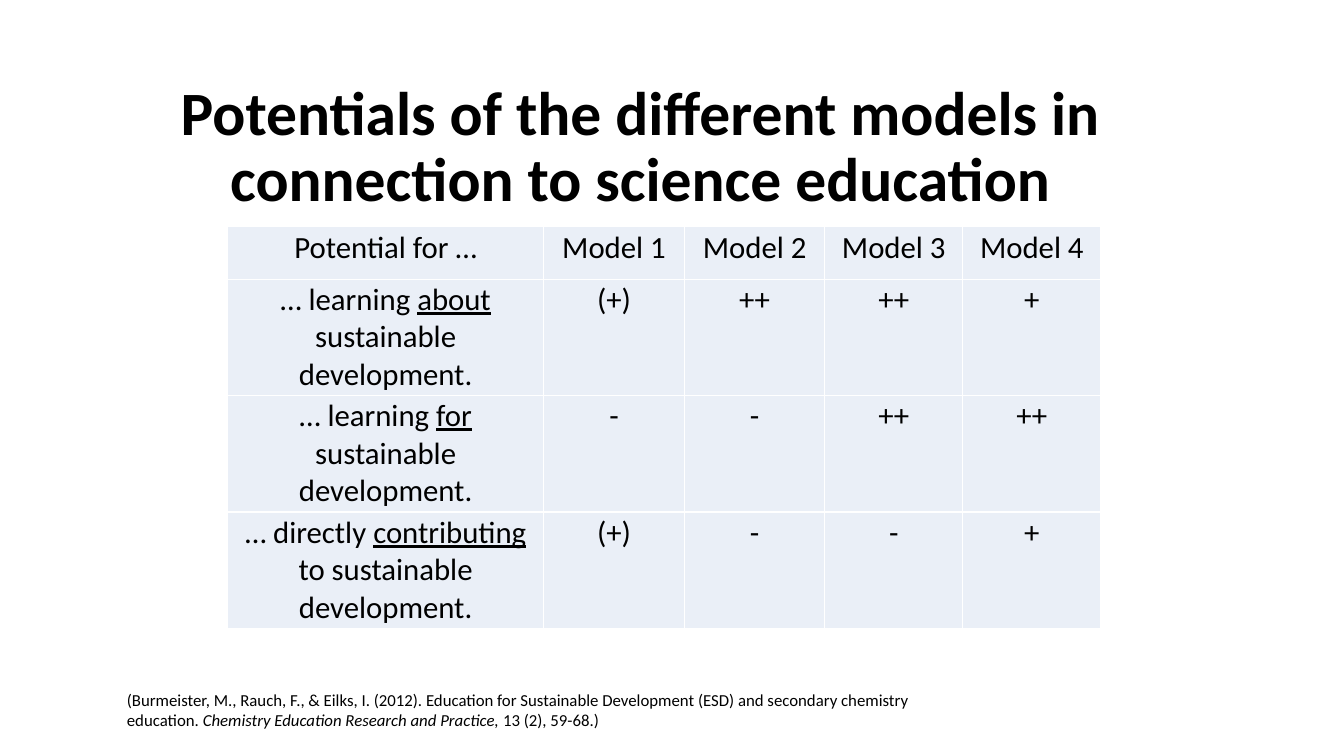
from dataclasses import dataclass

from lxml.etree import SubElement
from pptx import Presentation
from pptx.dml.color import RGBColor
from pptx.enum.text import MSO_ANCHOR, MSO_AUTO_SIZE, PP_ALIGN
from pptx.oxml.ns import qn
from pptx.util import Inches, Pt


@dataclass(frozen=True)
class Theme:
    font: str = "Calibri"
    ink: str = "000000"
    cell: str = "EAEFF7"
    rule: str = "FFFFFF"
    title: int = 44
    table: int = 22
    cite: int = 12


class Deck:
    def __init__(self, theme):
        self.theme = theme
        self.prs = Presentation()
        self.prs.slide_width = Inches(13.33)
        self.prs.slide_height = Inches(7.5)
        self.slide = self.prs.slides.add_slide(self.prs.slide_layouts[5])

    def add_runs(self, para, runs, size, align=PP_ALIGN.LEFT, bold=False):
        """Add runs given as (text, mark), where mark is "", "u" or "i"."""
        para.alignment = align
        for text, mark in runs:
            run = para.add_run()
            run.text = text
            font = run.font
            font.name, font.size, font.bold = self.theme.font, Pt(size), bold
            font.underline, font.italic = mark == "u", mark == "i"
            font.color.rgb = RGBColor.from_string(self.theme.ink)

    def title(self, text, box):
        shape = self.slide.shapes.title
        shape.left, shape.top, shape.width, shape.height = map(Inches, box)
        frame = shape.text_frame
        frame.word_wrap = True
        frame.auto_size = MSO_AUTO_SIZE.NONE
        frame.vertical_anchor = MSO_ANCHOR.MIDDLE
        para = frame.paragraphs[0]
        para.line_spacing = 0.9
        self.add_runs(para, [(text, "")], self.theme.title,
                      PP_ALIGN.CENTER, True)

    def text(self, runs, box):
        frame = self.slide.shapes.add_textbox(*map(Inches, box)).text_frame
        frame.word_wrap = True
        frame.auto_size = MSO_AUTO_SIZE.SHAPE_TO_FIT_TEXT
        self.add_runs(frame.paragraphs[0], runs, self.theme.cite)

    def edge(self, cell):
        """Draw the four borders of a cell."""
        props = cell._tc.get_or_add_tcPr()
        for spot, side in enumerate(("lnL", "lnR", "lnT", "lnB")):
            line = SubElement(props, qn(f"a:{side}"), w=str(Pt(1)))
            props.insert(spot, line)
            fill = SubElement(line, qn("a:solidFill"))
            SubElement(fill, qn("a:srgbClr"), val=self.theme.rule)

    def table(self, rows, box, widths, heights):
        shape = self.slide.shapes.add_table(
            len(rows), len(widths), *map(Inches, box))
        grid = shape.table
        grid.first_row = grid.horz_banding = False
        for col, width in zip(grid.columns, widths):
            col.width = Inches(width)
        for row, height, cells in zip(grid.rows, heights, rows):
            row.height = Inches(height)
            for cell, runs in zip(row.cells, cells):
                cell.margin_left = cell.margin_right = Inches(0.02)
                cell.margin_top = cell.margin_bottom = Inches(0.02)
                cell.fill.solid()
                cell.fill.fore_color.rgb = RGBColor.from_string(self.theme.cell)
                self.edge(cell)
                self.add_runs(cell.text_frame.paragraphs[0], runs,
                              self.theme.table, PP_ALIGN.CENTER)
        shape.height = Inches(box[3])


def main():
    deck = Deck(Theme())
    deck.title("Potentials of the different models in connection to "
               "science education", (0.24, 0.85, 12.23, 1.25))

    goals = [
        ("… learning ", "about", " sustainable development.",
         ("(+)", "++", "++", "+")),
        ("… learning ", "for", " sustainable development.",
         ("-", "-", "++", "++")),
        ("… directly ", "contributing", " to sustainable development.",
         ("(+)", "-", "-", "+")),
    ]
    rows = [[[("Potential for …", "")]]
            + [[(f"Model {n}", "")] for n in range(1, 5)]]
    for start, key, end, marks in goals:
        rows.append([[(start, ""), (key, "u"), (end, "")]]
                    + [[(mark, "")] for mark in marks])
    deck.table(rows, (2.26, 2.25, 8.66, 3.94),
               (3.13, 1.4, 1.39, 1.37, 1.37), [0.52] + [0.96] * len(goals))

    deck.text([
        ("(Burmeister, M., Rauch, F., & Eilks, I. (2012). Education for "
         "Sustainable Development (ESD) and secondary chemistry education. ", ""),
        ("Chemistry Education Research and Practice, ", "i"),
        ("13 (2), 59-68.)", ""),
    ], (1.16, 6.79, 7.99, 0.5))
    deck.prs.save("out.pptx")


if __name__ == "__main__":
    main()
